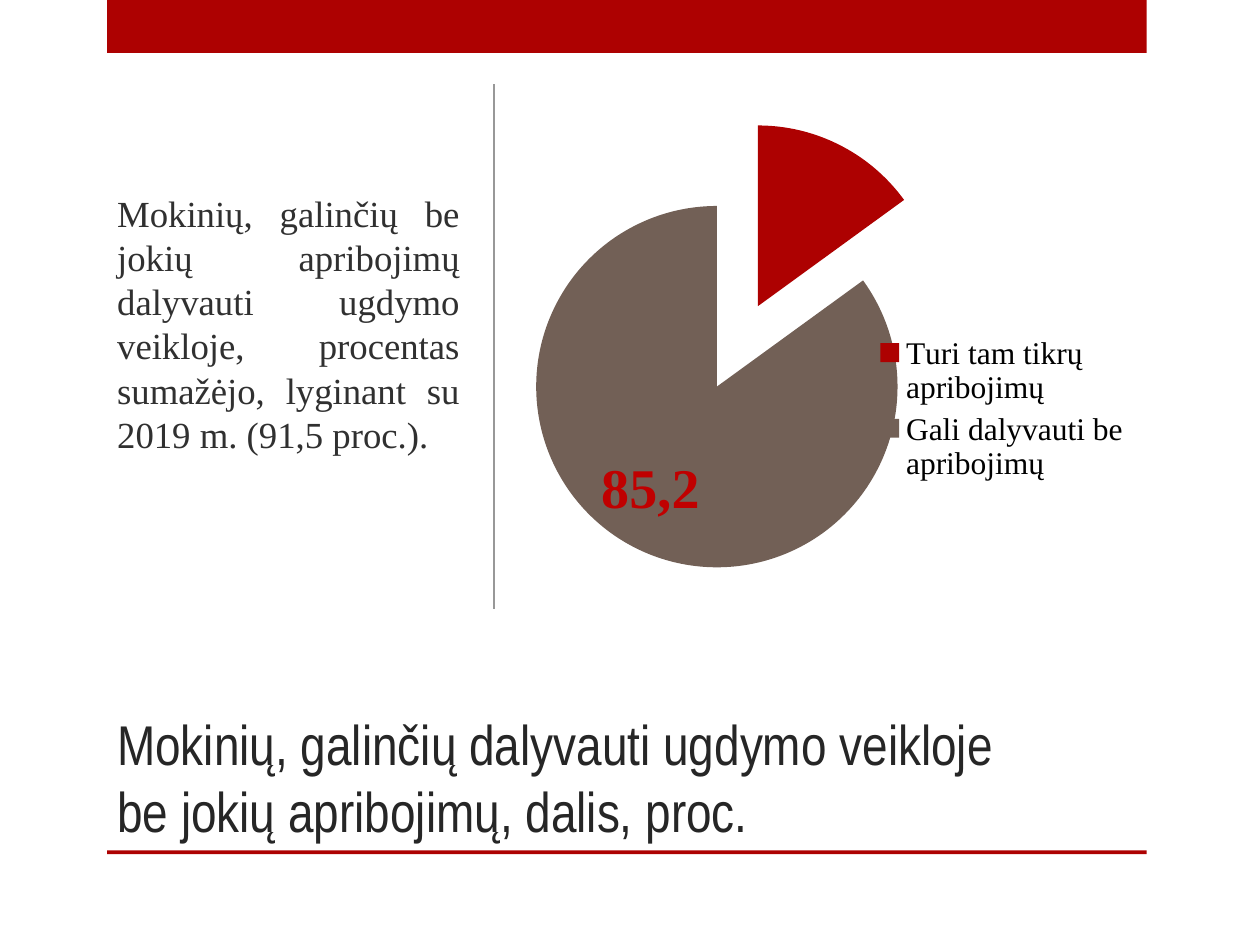
import pptx
import pptx.chart.data
import pptx.dml.color
import pptx.enum.chart
import pptx.enum.dml
import pptx.enum.shapes
import pptx.enum.text
import pptx.oxml.ns
import pptx.util
from lxml import etree

Inches = pptx.util.Inches
Pt = pptx.util.Pt
qn = pptx.oxml.ns.qn
SERIF = "Times New Roman"
COLORS = {
    "red": "AD0101",
    "brown": "726056",
    "label": "C00000",
    "title": "262626",
    "body": "303030",
    "rule": "989898",
    "black": "000000",
}


def color(name):
    return pptx.dml.color.RGBColor.from_string(COLORS[name])


def place(shape, left, top, width, height):
    shape.left, shape.top = Inches(left), Inches(top)
    shape.width, shape.height = Inches(width), Inches(height)


def style(font, face, size, tint, bold=False):
    font.name, font.size, font.bold = face, Pt(size), bold
    font.color.rgb = color(tint)


def add_bar(slide, top, height):
    bar = slide.shapes.add_shape(
        pptx.enum.shapes.MSO_SHAPE.RECTANGLE,
        Inches(0.85), Inches(top), Inches(8.25), Inches(height))
    bar.shadow.inherit = False
    bar.fill.solid()
    bar.fill.fore_color.rgb = color("red")
    bar.line.fill.background()


def add_rule(slide, left, top, end):
    rule = slide.shapes.add_connector(
        pptx.enum.shapes.MSO_CONNECTOR.STRAIGHT,
        Inches(left), Inches(top), Inches(left), Inches(end))
    rule.line.color.rgb = color("rule")
    rule.line.width = Pt(1.25)
    etree.SubElement(rule._element.spPr, qn("a:effectLst"))


def fill_text(holder, box, text, face, size, tint, align, anchor):
    place(holder, *box)
    frame = holder.text_frame
    frame.word_wrap = True
    frame.auto_size = pptx.enum.text.MSO_AUTO_SIZE.NONE
    frame.vertical_anchor = anchor
    para = frame.paragraphs[0]
    para.alignment = align
    para.line_spacing = 1.0
    run = para.add_run()
    run.text = text
    style(run.font, face, size, tint)
    return frame


def make_layout(**values):
    layout = etree.Element(qn("c:layout"))
    manual = etree.SubElement(layout, qn("c:manualLayout"))
    for key, value in values.items():
        etree.SubElement(manual, qn("c:" + key)).set("val", str(value))
    return layout


def add_pie(slide):
    data = pptx.chart.data.CategoryChartData()
    data.categories = ["Turi tam tikrų apribojimų", "Gali dalyvauti be apribojimų"]
    data.add_series("Series 1", [15, 85])
    chart = slide.shapes.add_chart(
        pptx.enum.chart.XL_CHART_TYPE.PIE,
        Inches(4.06), Inches(0.5), Inches(5.02), Inches(4.5), data).chart
    chart.has_title = False
    style(chart.font, SERIF, 18, "black")

    chart.has_legend = True
    legend = chart.legend
    legend.position = pptx.enum.chart.XL_LEGEND_POSITION.RIGHT
    legend.include_in_layout = True
    legend._element.find(qn("c:legendPos")).addnext(make_layout(
        xMode="edge", yMode="edge", x=0.57, y=0.47, w=0.41, h=0.28))

    area = chart._chartSpace.chart.plotArea
    for old in area.findall(qn("c:layout")):
        area.remove(old)
    area.insert(0, make_layout(
        layoutTarget="inner", xMode="edge", yMode="edge", x=0, y=0, w=5 / 7, h=1))

    plot = chart.plots[0]
    plot.vary_by_categories = True
    series = plot.series[0]
    burst = etree.Element(qn("c:explosion"))
    burst.set("val", "25")
    series._element.find(qn("c:tx")).addnext(burst)
    for index, tint in enumerate(["red", "brown"]):
        format = series.points[index].format
        format.fill.solid()
        format.fill.fore_color.rgb = color(tint)
        format.line.fill.background()

    label = series.points[1].data_label
    run = label.text_frame.paragraphs[0].add_run()
    run.text = "85,2"
    style(run.font, SERIF, 32, "label", True)
    label.position = pptx.enum.chart.XL_LABEL_POSITION.CENTER
    node = series._element.find(".//" + qn("c:dLbl"))
    for old in node.findall(qn("c:layout")):
        node.remove(old)
    node.insert(1, make_layout(x=-0.04, y=0.04))


def main():
    deck = pptx.Presentation()
    deck.slide_width, deck.slide_height = Inches(10), Inches(7.5)
    slide = deck.slides.add_slide(deck.slide_layouts[7])
    title, spare, body = slide.placeholders
    spare._element.getparent().remove(spare._element)
    add_bar(slide, 0, 0.42)
    add_bar(slide, 6.75, 0.03)
    add_rule(slide, 3.92, 0.67, 4.83)
    align = pptx.enum.text.PP_ALIGN
    anchor = pptx.enum.text.MSO_ANCHOR
    fill_text(
        title, (0.83, 5, 7.42, 1.75),
        "Mokinių, galinčių dalyvauti ugdymo veikloje be jokių apribojimų, dalis, proc.",
        "Arial Narrow", 32, "title", align.LEFT, anchor.BOTTOM)
    add_pie(slide)
    frame = fill_text(
        body, (0.83, 0.5, 2.92, 4.5),
        "Mokinių, galinčių be jokių apribojimų dalyvauti ugdymo veikloje, "
        "procentas sumažėjo, lyginant su 2019 m. (91,5 proc.).",
        SERIF, 21, "body", align.JUSTIFY, anchor.MIDDLE)
    frame.margin_bottom = Inches(0.42)
    deck.save("out.pptx")


if __name__ == "__main__":
    main()
